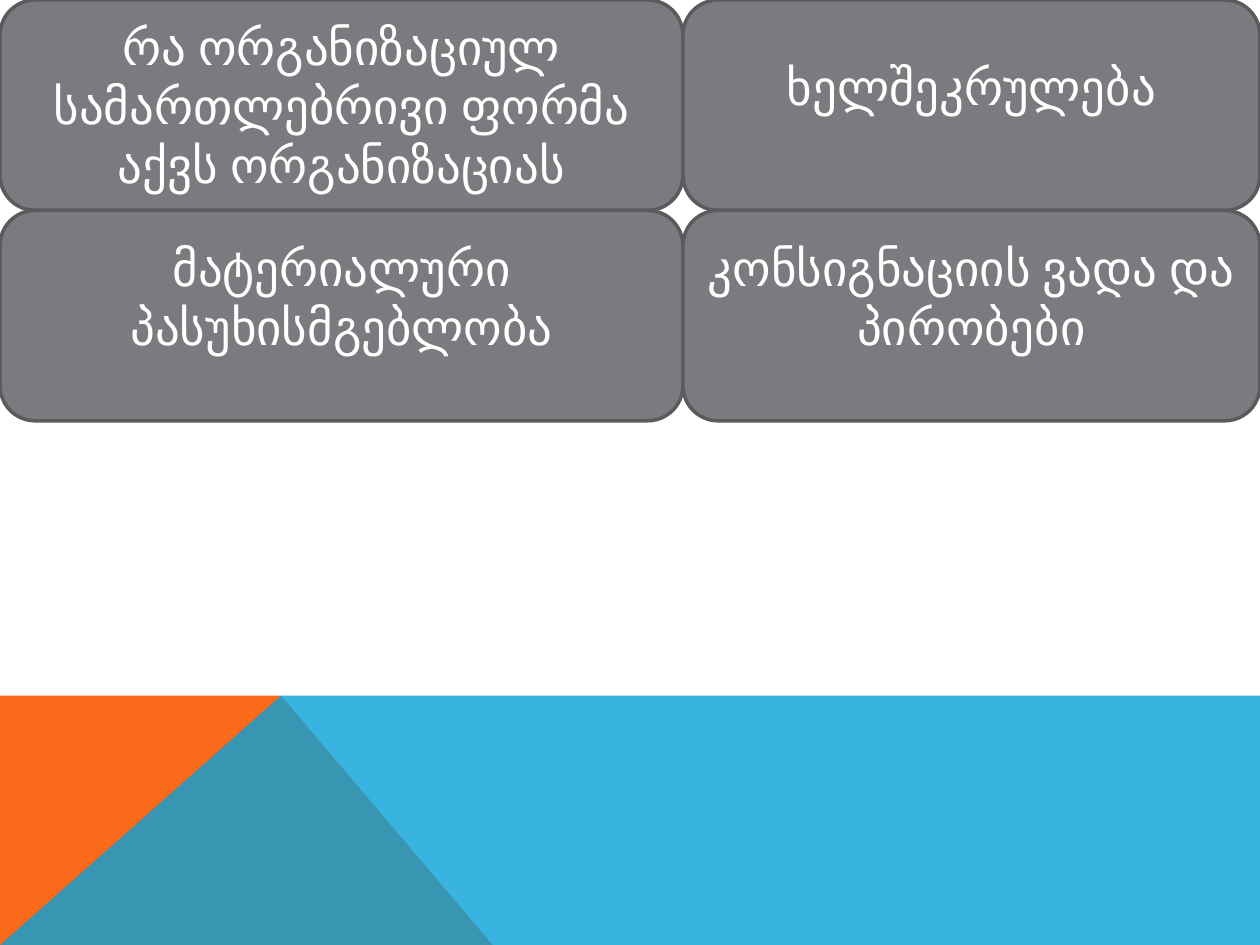
import pptx
import pptx.dml.color
import pptx.enum.shapes
import pptx.enum.text
import pptx.oxml
import pptx.oxml.ns
import pptx.util
from pptx.dml.color import RGBColor
from pptx.util import Inches

ORANGE = RGBColor(0xF9, 0x6A, 0x1B)
BLUE = RGBColor(0x08, 0xA1, 0xD9)
GRAY = RGBColor(0x79, 0x7B, 0x7E)
DARK_GRAY = RGBColor(0x5A, 0x5B, 0x5D)
WHITE = RGBColor(0xFF, 0xFF, 0xFF)

COLUMNS = [(0, 5.42), (5.42, 4.58)]
ROW_HEIGHT = 1.67
BAND_TOP = 5.52
PEAK = (2.23, BAND_TOP)
TOPICS = [
    [("რა ორგანიზაციულ სამართლებრივი ფორმა აქვს ორგანიზაციას", 0.05),
     ("ხელშეკრულება", 0.35)],
    [("მატერიალური პასუხისმგებლობა", 0.35),
     ("კონსიგნაციის ვადა და პირობები", 0.35)],
]


def add_polygon(page, points, color, opacity=100):
    """Draw a filled polygon without an outline."""
    corners = [(Inches(x), Inches(y)) for x, y in points]
    builder = page.shapes.build_freeform(*corners[0], scale=1.0)
    builder.add_line_segments(corners[1:], close=True)
    polygon = builder.convert_to_shape()
    polygon.shadow.inherit = False
    polygon.fill.solid()
    polygon.fill.fore_color.rgb = color
    polygon.line.fill.background()
    if opacity < 100:
        tint = polygon._element.spPr.find(".//" + pptx.oxml.ns.qn("a:srgbClr"))
        alpha = pptx.oxml.parse_xml(
            f'<a:alpha {pptx.oxml.ns.nsdecls("a")} val="{opacity * 1000}"/>')
        tint.append(alpha)


def write_text(frame, text, size=28, font="Roboto", color=WHITE, bottom=0.05):
    """Write centred text above the given bottom margin."""
    frame.word_wrap = True
    frame.vertical_anchor = pptx.enum.text.MSO_ANCHOR.MIDDLE
    frame.margin_bottom = Inches(bottom)
    para = frame.paragraphs[0]
    para.alignment = pptx.enum.text.PP_ALIGN.CENTER
    span = para.add_run()
    span.text = text
    span.font.name = font
    span.font.size = pptx.util.Pt(size)
    span.font.color.rgb = color


def add_topic(page, left, top, width, text, bottom):
    """Add one rounded topic box."""
    box = page.shapes.add_shape(
        pptx.enum.shapes.MSO_SHAPE.ROUNDED_RECTANGLE,
        Inches(left), Inches(top), Inches(width), Inches(ROW_HEIGHT))
    box.shadow.inherit = False
    box.fill.solid()
    box.fill.fore_color.rgb = GRAY
    box.line.color.rgb = DARK_GRAY
    box.line.width = pptx.util.Pt(2)
    write_text(box.text_frame, text, bottom=bottom)


def main():
    """Build the slide and save the deck."""
    deck = pptx.Presentation()
    deck.slide_width, deck.slide_height = Inches(10), Inches(7.5)
    page = deck.slides.add_slide(deck.slide_layouts[6])
    add_polygon(page, [(0, 7.5), (0, BAND_TOP), PEAK, (3.91, 7.5)], ORANGE)
    add_polygon(page, [(0, 7.5), PEAK, (10, BAND_TOP), (10, 7.5)], BLUE, opacity=80)
    for row, topics in enumerate(TOPICS):
        for (left, width), (text, bottom) in zip(COLUMNS, topics):
            add_topic(page, left, row * ROW_HEIGHT, width, text, bottom)
    deck.save("out.pptx")


if __name__ == "__main__":
    main()
